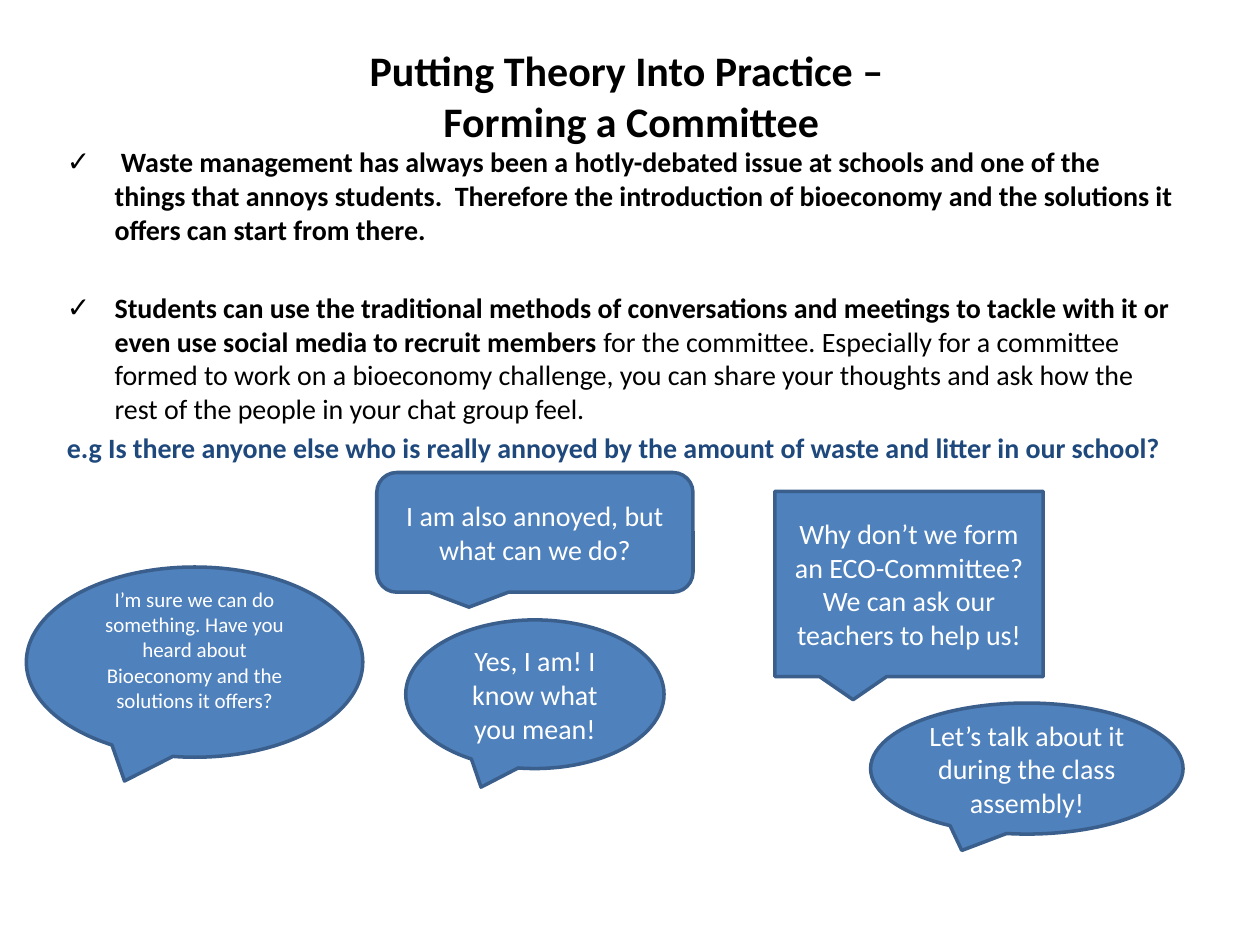
import pptx
import pptx.util
import pptx.dml.color
import pptx.enum.shapes
import pptx.enum.text
import pptx.oxml
import pptx.oxml.ns

Inches = pptx.util.Inches
Pt = pptx.util.Pt
KIND = pptx.enum.shapes.MSO_SHAPE
ALIGN = pptx.enum.text.PP_ALIGN
ANCHOR = pptx.enum.text.MSO_ANCHOR

BLACK, WHITE, NAVY = "000000", "FFFFFF", "1F497D"
BLUE, EDGE = "4F81BD", "3A5F8C"

# Each item: text runs with their weight, bullet, colour, space before
ITEMS = [
    ([(" Waste management has always been a hotly-debated issue at schools and one of "
       "the things that annoys students.  Therefore the introduction of bioeconomy and "
       "the solutions it offers can start from there.", True)], "✓", BLACK, 0),
    ([("Students can use the traditional methods of conversations and meetings to tackle "
       "with it or even use social media to recruit members ", True),
      ("for the committee. Especially for a committee formed to work on a bioeconomy "
       "challenge, you can share your thoughts and ask how the rest of the people in "
       "your chat group feel.", False)], "✓", BLACK, 25.8),
    ([("e.g Is there anyone else who is really annoyed by the amount of waste and litter "
       "in our school?", True)], None, NAVY, 3.2),
]

# Each callout: kind, left, top, width, height, text
CALLS = [
    (KIND.OVAL_CALLOUT, 3.22, 4.92, 2.05, 1.18, "Yes, I am! I know what you mean!"),
    (KIND.ROUNDED_RECTANGULAR_CALLOUT, 2.99, 3.75, 2.51, 0.95,
     "I am also annoyed, but what can we do?"),
    (KIND.OVAL_CALLOUT, 6.91, 5.58, 2.48, 1.04,
     "Let’s talk about it during the class assembly!"),
    (KIND.RECTANGULAR_CALLOUT, 6.15, 3.9, 2.13, 1.47,
     "Why don’t we form an ECO-Committee? We can ask our teachers to help us!"),
]
LONG_CALL = (KIND.OVAL_CALLOUT, 0.21, 4.5, 2.67, 1.51,
             "I’m sure we can do something. Have you heard about Bioeconomy and the "
             "solutions it offers?")


def paint(target, color):
    """Set a colour on a font or a line, or a solid colour on a fill."""
    if hasattr(target, "solid"):
        target.solid()
        target.fore_color.rgb = pptx.dml.color.RGBColor.from_string(color)
    else:
        target.color.rgb = pptx.dml.color.RGBColor.from_string(color)


def style(font, size, color, bold=None):
    font.name = "Calibri"
    font.size = Pt(size)
    font.bold = bold
    paint(font, color)


def place(shape, left, top, width, height):
    shape.left, shape.top = Inches(left), Inches(top)
    shape.width, shape.height = Inches(width), Inches(height)


def set_mark(para, mark):
    """Give a paragraph a hanging bullet, or none and no indent."""
    props = para._p.get_or_add_pPr()
    indent = Inches(0.38) if mark else 0
    props.set("marL", str(indent))
    props.set("indent", str(-indent))
    tag = "a:buChar" if mark else "a:buNone"
    node = pptx.oxml.parse_xml(f"<{tag} {pptx.oxml.ns.nsdecls('a')}/>")
    if mark:
        node.set("char", mark)
    props.append(node)


def add_title(slide):
    title = slide.shapes.title
    place(title, 0.51, 0.13, 9, 1.25)
    frame = title.text_frame
    frame.auto_size = pptx.enum.text.MSO_AUTO_SIZE.NONE
    frame.vertical_anchor = ANCHOR.MIDDLE
    frame.text = "Putting Theory Into Practice – \vForming a Committee"
    para = frame.paragraphs[0]
    para.alignment = ALIGN.CENTER
    style(para.font, 24, BLACK, True)


def add_body(slide):
    body = slide.placeholders[1]
    place(body, 0.43, 1.1, 9, 5.91)
    frame = body.text_frame
    frame.auto_size = pptx.enum.text.MSO_AUTO_SIZE.NONE
    for i, (runs, mark, color, gap) in enumerate(ITEMS):
        para = frame.add_paragraph() if i else frame.paragraphs[0]
        set_mark(para, mark)
        para.space_before = Pt(gap)
        mixed = len(runs) > 1
        style(para.font, 16, color, None if mixed else runs[0][1])
        for text, bold in runs:
            run = para.add_run()
            run.text = text
            if mixed:
                run.font.bold = bold


def add_call(slide, kind, left, top, width, height, text, size=16):
    shape = slide.shapes.add_shape(kind, Inches(left), Inches(top),
                                   Inches(width), Inches(height))
    shape.shadow.inherit = False
    paint(shape.fill, BLUE)
    paint(shape.line, EDGE)
    shape.line.width = Pt(2)
    frame = shape.text_frame
    frame.word_wrap = True
    frame.vertical_anchor = ANCHOR.MIDDLE
    frame.text = text
    para = frame.paragraphs[0]
    para.alignment = ALIGN.CENTER
    style(para.font, size, WHITE)
    return shape


def main():
    deck = pptx.Presentation()
    deck.slide_width, deck.slide_height = Inches(10), Inches(7.5)
    slide = deck.slides.add_slide(deck.slide_layouts[1])
    add_title(slide)
    add_body(slide)
    for call in CALLS:
        add_call(slide, *call)
    long = add_call(slide, *LONG_CALL, size=12)
    long.text_frame.margin_bottom = Inches(0.25)
    deck.save("out.pptx")


if __name__ == "__main__":
    main()
